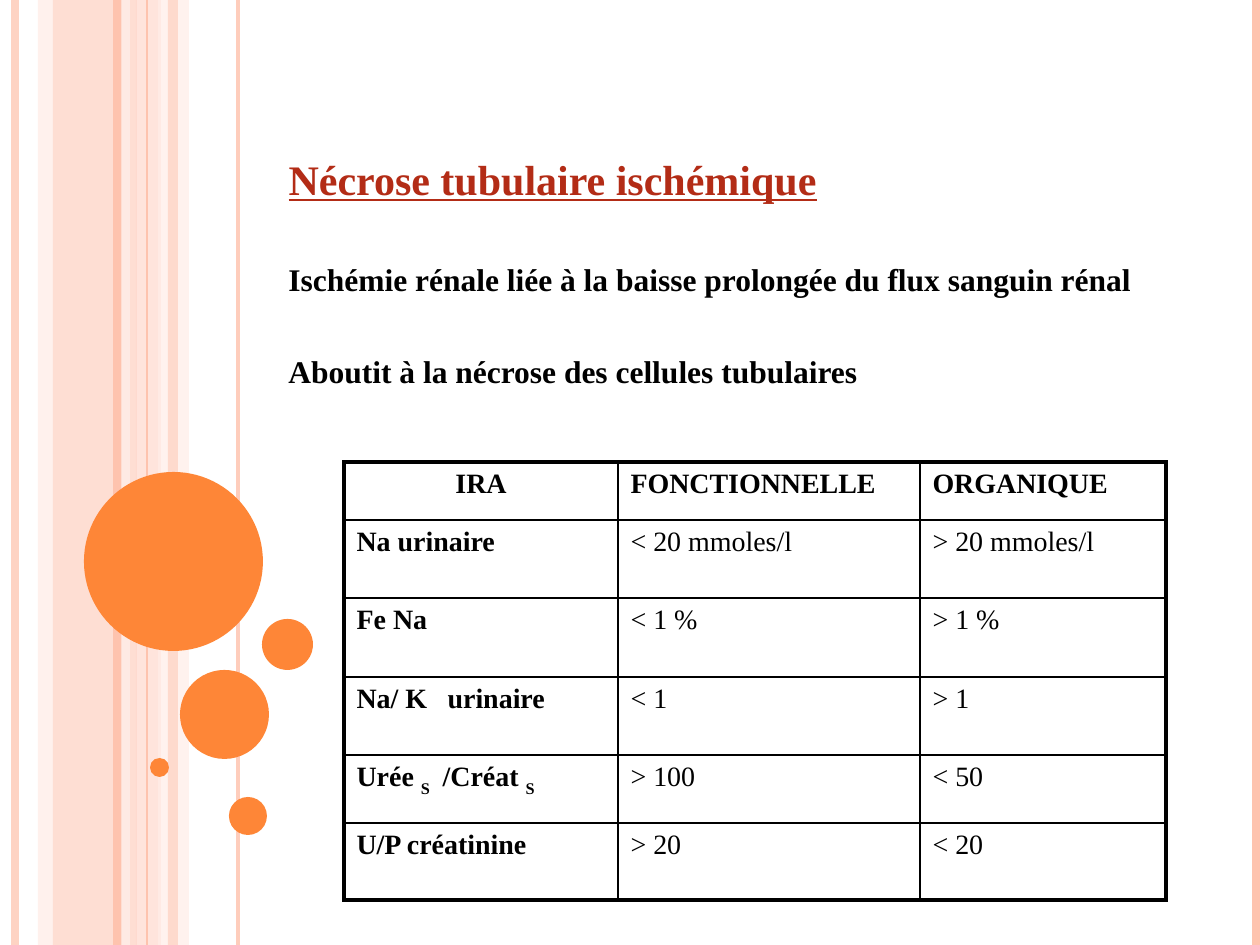
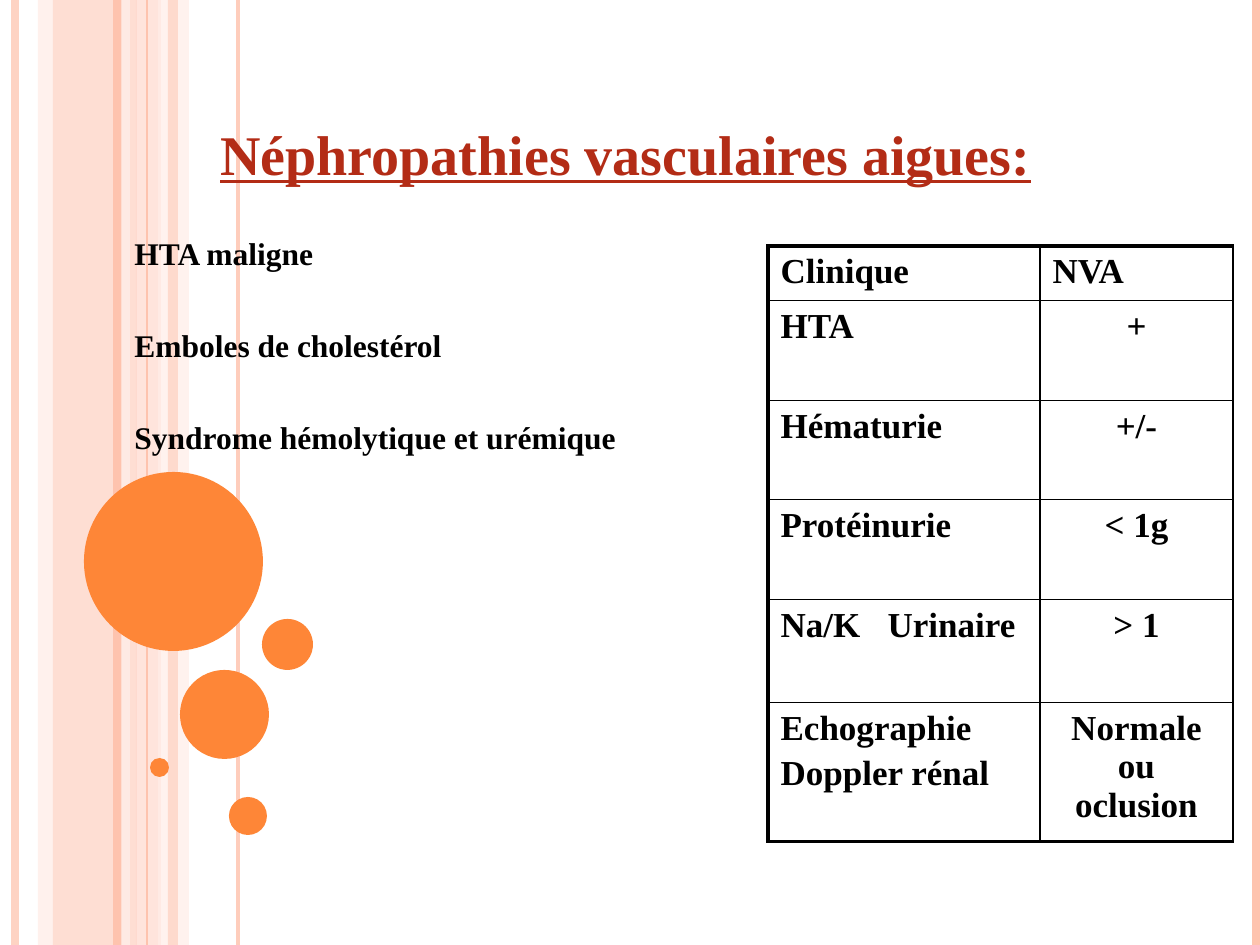
import lxml.etree
import pptx
import pptx.dml.color
import pptx.enum.shapes
import pptx.enum.text
import pptx.oxml.ns
import pptx.util

PIXEL = 914400 / 126
WIDTH, HEIGHT = 1260, 945
FONT = "Times New Roman"
COLORS = {
    "peach": "FEC3AE",
    "pale": "FFD9CE",
    "mist": "FFEDE8",
    "orange": "FE8637",
    "title": "B32C16",
    "text": "000000",
}
BANDS = [
    (53, 84, "peach", 54),
    (38, 15, "pale", 36),
    (136, 25, "pale", 70),
    (158, 31, "mist", 71),
    (168, 10, "peach", 51),
]
STRIPES = [
    (15, 4.5, "peach", 73),
    (126, 4.5, "mist", 83),
    (117, 4.5, "peach", 100),
    (238, 2.25, "peach", 82),
    (147, 0.75, "peach", 100),
    (1256, 4.5, "peach", 100),
]
BUBBLES = [
    (84, 472, 179),
    (180, 670, 89),
    (150, 758, 19),
    (229, 797, 38),
    (262, 619, 51),
]
ALIGN = pptx.enum.text.PP_ALIGN
qn = pptx.oxml.ns.qn


def px(value):
    return pptx.util.Emu(round(value * PIXEL))


def rgb(name):
    return pptx.dml.color.RGBColor.from_string(COLORS[name])


def child(parent, tag, **attributes):
    return lxml.etree.SubElement(parent, qn(tag), attributes)


class Deck:
    def __init__(self):
        self.presentation = pptx.Presentation()
        self.presentation.slide_width = px(WIDTH)
        self.presentation.slide_height = px(HEIGHT)
        self.slide = None

    def add_slide(self, title, box, size, align):
        layout = self.presentation.slide_layouts.get_by_name("Title Only")
        self.slide = self.presentation.slides.add_slide(layout)
        for left, width, color, opacity in BANDS:
            self.preset("RECTANGLE", (left, 0, width, HEIGHT), color, opacity)
        for stripe in STRIPES:
            self.stripe(*stripe)
        for left, top, diameter in BUBBLES:
            self.preset("OVAL", (left, top, diameter, diameter), "orange")
        self.title(title, box, size, align)

    def fade(self, shape, opacity):
        if opacity < 100:
            color = next(shape.element.spPr.iter(qn("a:srgbClr")))
            child(color, "a:alpha", val=str(opacity * 1000))

    def preset(self, kind, box, color, opacity=100):
        shape_type = getattr(pptx.enum.shapes.MSO_SHAPE, kind)
        shape = self.slide.shapes.add_shape(shape_type, *map(px, box))
        shape.shadow.inherit = False
        shape.fill.solid()
        shape.fill.fore_color.rgb = rgb(color)
        shape.line.fill.background()
        self.fade(shape, opacity)

    def stripe(self, x, width, color, opacity):
        line = self.slide.shapes.add_connector(
            pptx.enum.shapes.MSO_CONNECTOR.STRAIGHT, px(x), px(0), px(x), px(HEIGHT))
        line.line.color.rgb = rgb(color)
        line.line.width = pptx.util.Pt(width)
        self.fade(line, opacity)
        child(line.element.spPr, "a:effectLst")

    def run(self, paragraph, text, size, color="text", bold=True):
        run = paragraph.add_run()
        run.text = text
        run.font.name = FONT
        run.font.size = pptx.util.Pt(size)
        run.font.bold = bold
        run.font.color.rgb = rgb(color)
        return run

    def title(self, text, box, size, align):
        shape = self.slide.shapes.title
        shape.left, shape.top, shape.width, shape.height = map(px, box)
        frame = shape.text_frame
        frame.auto_size = pptx.enum.text.MSO_AUTO_SIZE.NONE
        frame.vertical_anchor = pptx.enum.text.MSO_ANCHOR.TOP
        paragraph = frame.paragraphs[0]
        paragraph.alignment = align
        self.run(paragraph, text, size, "title").font.underline = True
        shape.element.getparent().append(shape.element)

    def statements(self, lines, box):
        frame = self.slide.shapes.add_textbox(*map(px, box)).text_frame
        frame.word_wrap = True
        for index, line in enumerate(lines):
            paragraph = frame.paragraphs[0] if index == 0 else frame.add_paragraph()
            if index < len(lines) - 1:
                paragraph.space_after = pptx.util.Pt(31)
            self.run(paragraph, line, 18)

    def table(self, rows, left, top, widths, heights, size, centred, thick, light=(), tabs=()):
        box = (left, top, sum(widths), sum(heights))
        table = self.slide.shapes.add_table(len(rows), len(widths), *map(px, box)).table
        table.first_row = table.horz_banding = False
        for column, width in zip(table.columns, widths):
            column.width = px(width)
        for row, height in zip(table.rows, heights):
            row.height = px(height)
        for r, texts in enumerate(rows):
            for c, text in enumerate(texts):
                cell = table.cell(r, c)
                align = ALIGN.CENTER if (r, c) in centred else ALIGN.LEFT
                tab = dict(tabs).get(r) if c == 0 else None
                self.cell_text(cell, text, size, align, (r, c) not in light, tab)
                cell.fill.background()
                outer = {"L": c == 0, "R": c == len(widths) - 1,
                         "T": r == 0, "B": r == len(rows) - 1}
                self.borders(cell, {side: 2.25 if edge and side in thick else 1
                                    for side, edge in outer.items()})

    def cell_text(self, cell, text, size, align, bold, tab):
        frame = cell.text_frame
        for index, line in enumerate(text.split("\n")):
            paragraph = frame.paragraphs[0] if index == 0 else frame.add_paragraph()
            paragraph.alignment = align
            if index:
                paragraph.space_before = pptx.util.Pt(size * 0.2)
            if tab:
                stops = child(paragraph._p.get_or_add_pPr(), "a:tabLst")
                child(stops, "a:tab", pos=str(px(tab)), algn="l")
            for part, piece in enumerate(line.split("_")):
                if piece:
                    run = self.run(paragraph, piece, size, bold=bold)
                    if part % 2:
                        run._r.get_or_add_rPr().set("baseline", "-30000")

    def borders(self, cell, widths):
        properties = cell._tc.get_or_add_tcPr()
        for index, (side, width) in enumerate(widths.items()):
            line = child(properties, f"a:ln{side}", w=str(pptx.util.Pt(width)))
            child(child(line, "a:solidFill"), "a:srgbClr", val=COLORS["text"])
            properties.insert(index, line)


def main():
    deck = Deck()

    deck.add_slide("Nécrose tubulaire ischémique", (276, 147, 600, 63), 24, ALIGN.LEFT)
    deck.statements(
        ["Ischémie rénale liée à la baisse prolongée du flux sanguin rénal",
         "Aboutit à la nécrose des cellules tubulaires"],
        (276, 254, 876, 137))
    failure_rows = [
        ("IRA", "FONCTIONNELLE", "ORGANIQUE"),
        ("Na urinaire", "< 20 mmoles/l", "> 20 mmoles/l"),
        ("Fe Na", "< 1 %", "> 1 %"),
        ("Na/ K\turinaire", "< 1", "> 1"),
        ("Urée _S_\t/Créat _S", "> 100", "< 50"),
        ("U/P créatinine", "> 20", "< 20"),
    ]
    values = {(r, c) for r in range(1, 6) for c in (1, 2)}
    deck.table(failure_rows, 344, 462, [274, 302, 246], [58, 78, 79, 78, 68, 77], 16,
               centred={(0, 0)}, thick="LTRB", light=values, tabs={3: 91, 4: 86})

    deck.add_slide("Néphropathies vasculaires aigues:", (59, 113, 1134, 75), 32, ALIGN.CENTER)
    deck.statements(
        ["HTA maligne", "Emboles de cholestérol", "Syndrome hémolytique et urémique"],
        (122, 228, 600, 226))
    vascular_rows = [
        ("Clinique", "NVA"),
        ("HTA", "+"),
        ("Hématurie", "+/-"),
        ("Protéinurie", "< 1g"),
        ("Na/K\tUrinaire", "> 1"),
        ("Echographie\nDoppler rénal", "Normale ou oclusion"),
    ]
    deck.table(vascular_rows, 768, 246, [272, 193], [51, 100, 99, 100, 103, 129], 20,
               centred={(r, 1) for r in range(1, 6)}, thick="LTB", tabs={4: 107})

    deck.presentation.save("out.pptx")


if __name__ == "__main__":
    main()
